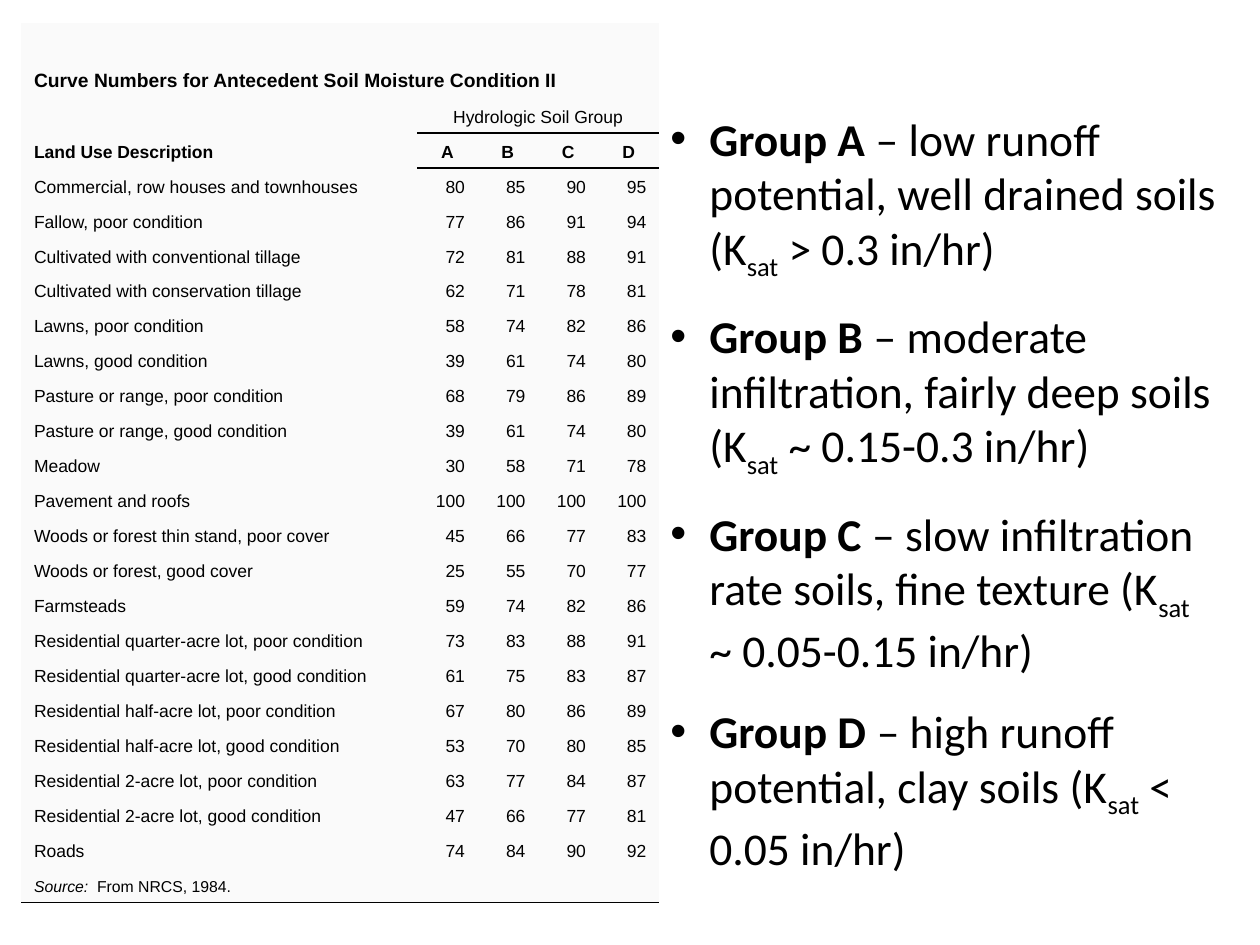
import pptx
import pptx.dml.color
import pptx.enum.text
import pptx.oxml
import pptx.oxml.ns
import pptx.util

Inches, Pt = pptx.util.Inches, pptx.util.Pt
ALIGN = pptx.enum.text.PP_ALIGN
BLACK = pptx.dml.color.RGBColor(0x00, 0x00, 0x00)
PALE = pptx.dml.color.RGBColor(0xFA, 0xFA, 0xFA)
NO_STYLE = "{2D5ABB26-0587-4C30-8999-92F81FD0307C}"
XMLNS = pptx.oxml.ns.nsdecls("a")

COLS = [3.14] + [0.48] * 4
TABLE_H = 6.99
TOP_ROWS = [0.31, 0.29]

CURVES = [
    ("Commercial, row houses and townhouses", 80, 85, 90, 95),
    ("Fallow, poor condition", 77, 86, 91, 94),
    ("Cultivated with conventional tillage", 72, 81, 88, 91),
    ("Cultivated with conservation tillage", 62, 71, 78, 81),
    ("Lawns, poor condition", 58, 74, 82, 86),
    ("Lawns, good condition", 39, 61, 74, 80),
    ("Pasture or range, poor condition", 68, 79, 86, 89),
    ("Pasture or range, good condition", 39, 61, 74, 80),
    ("Meadow", 30, 58, 71, 78),
    ("Pavement and roofs", 100, 100, 100, 100),
    ("Woods or forest thin stand, poor cover", 45, 66, 77, 83),
    ("Woods or forest, good cover", 25, 55, 70, 77),
    ("Farmsteads", 59, 74, 82, 86),
    ("Residential quarter-acre lot, poor condition", 73, 83, 88, 91),
    ("Residential quarter-acre lot, good condition", 61, 75, 83, 87),
    ("Residential half-acre lot, poor condition", 67, 80, 86, 89),
    ("Residential half-acre lot, good condition", 53, 70, 80, 85),
    ("Residential 2-acre lot, poor condition", 63, 77, 84, 87),
    ("Residential 2-acre lot, good condition", 47, 66, 77, 81),
    ("Roads", 74, 84, 90, 92),
]

GROUPS = [
    ("Group A ", "– low runoff potential, well drained soils (K", " > 0.3 in/hr)"),
    ("Group B ", "– moderate infiltration, fairly deep soils (K",
     " ~ 0.15-0.3 in/hr)"),
    ("Group C ", "– slow infiltration rate soils, fine texture (K",
     " ~ 0.05-0.15 in/hr)"),
    ("Group D ", "– high runoff potential, clay soils (K", " < 0.05 in/hr)"),
]


def style(para, face, size, bold=None):
    font = para.font
    font.name, font.size, font.bold = face, Pt(size), bold
    font.color.rgb = BLACK


def write(cell, text, align=ALIGN.LEFT, size=10, bold=False):
    para = cell.text_frame.paragraphs[0]
    para.alignment = align
    style(para, "Arial", size, bold)
    para.add_run().text = text
    return para


def rule(cell, side):
    """Draw a one-point black line on side T or B of a cell."""
    line = pptx.oxml.parse_xml(
        f'<a:ln{side} {XMLNS} w="12700"><a:solidFill>'
        f'<a:srgbClr val="{BLACK}"/></a:solidFill></a:ln{side}>')
    cell._tc.get_or_add_tcPr().insert(0, line)


def make_grid(slide):
    count = len(CURVES) + 5
    frame = slide.shapes.add_table(count, len(COLS), Inches(0.17), Inches(0.18),
                                   Inches(sum(COLS)), Inches(TABLE_H))
    table = frame.table
    table.first_row = table.horz_banding = False
    table._tbl.tblPr.find(pptx.oxml.ns.qn("a:tableStyleId")).text = NO_STYLE
    for col, width in zip(table.columns, COLS):
        col.width = Inches(width)
    rest = count - len(TOP_ROWS)
    even = (TABLE_H - sum(TOP_ROWS)) / rest
    for row, height in zip(table.rows, TOP_ROWS + [even] * rest):
        row.height = Inches(height)
    for cell in table.iter_cells():
        cell.fill.solid()
        cell.fill.fore_color.rgb = PALE
        cell.vertical_anchor = pptx.enum.text.MSO_ANCHOR.BOTTOM
        end = cell.text_frame.paragraphs[0]._p.get_or_add_endParaRPr()
        end.set("sz", "1000")
    return table


def fill_grid(table):
    last = len(table.rows) - 1
    for row, first in ((0, 0), (1, 0), (2, 1)):
        table.cell(row, first).merge(table.cell(row, 4))
    write(table.cell(1, 0), "Curve Numbers for Antecedent Soil Moisture Condition II",
          size=11, bold=True)
    write(table.cell(2, 1), "Hydrologic Soil Group", ALIGN.CENTER)
    write(table.cell(3, 0), "Land Use Description", bold=True)
    for col, name in enumerate("ABCD", 1):
        write(table.cell(3, col), name, ALIGN.CENTER, bold=True)
        rule(table.cell(2, col), "B")
        rule(table.cell(3, col), "T")
    for row, (use, *values) in enumerate(CURVES, 4):
        write(table.cell(row, 0), use)
        for col, value in enumerate(values, 1):
            write(table.cell(row, col), str(value), ALIGN.RIGHT)
    source = write(table.cell(last, 0), "Source:", size=9)
    source.runs[0].font.italic = True
    source.add_run().text = "  From NRCS, 1984."
    for col in range(len(COLS)):
        rule(table.cell(last, col), "B")


def add_bullet(para, name, text, limit):
    style(para, "Calibri", 26)
    para.space_before, para.space_after = Pt(0), Pt(15)
    props = para._p.get_or_add_pPr()
    props.set("marL", str(Inches(0.31)))
    props.set("indent", str(-Inches(0.31)))
    for part in (name, text, "sat", limit):
        para.add_run().text = part
    para.runs[0].font.bold = True
    para.runs[2].font._element.set("baseline", "-25000")


def fill_body(body):
    body.left, body.top = Inches(5.22), Inches(0.83)
    body.width, body.height = Inches(4.56), Inches(5.96)
    frame = body.text_frame
    frame.word_wrap = True
    frame.auto_size = pptx.enum.text.MSO_AUTO_SIZE.SHAPE_TO_FIT_TEXT
    for num, group in enumerate(GROUPS):
        para = frame.add_paragraph() if num else frame.paragraphs[0]
        add_bullet(para, *group)


def main():
    deck = pptx.Presentation()
    deck.slide_width, deck.slide_height = Inches(10), Inches(7.5)
    slide = deck.slides.add_slide(deck.slide_layouts[1])
    title = slide.shapes.title._element
    title.getparent().remove(title)
    fill_grid(make_grid(slide))
    fill_body(slide.placeholders[1])
    deck.save("out.pptx")


if __name__ == "__main__":
    main()
